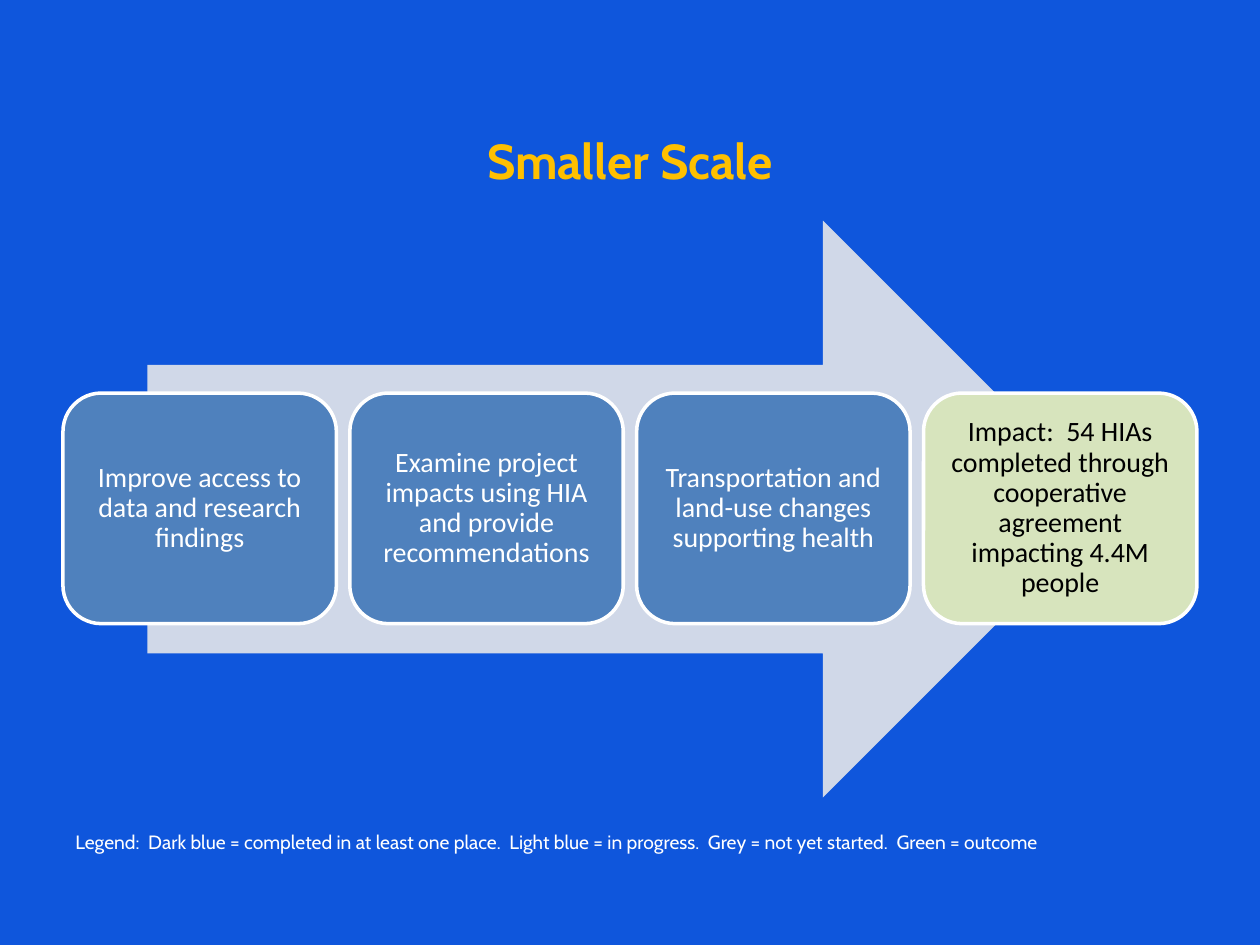
from pptx import Presentation
from pptx.dml.color import RGBColor
from pptx.enum.shapes import MSO_SHAPE as SHAPE
from pptx.enum.text import MSO_ANCHOR as ANCHOR, PP_ALIGN as ALIGN
from pptx.util import Inches, Pt

BLUE, GREEN, WHITE, BLACK = "4F81BD", "D7E4BD", "FFFFFF", "000000"
TITLE = "Smaller Scale"
STEPS = [
    ("Improve access to data and research findings", BLUE, WHITE),
    ("Examine project impacts using HIA and provide recommendations", BLUE, WHITE),
    ("Transportation and land-use changes supporting health", BLUE, WHITE),
    ("Impact:  54 HIAs completed through cooperative agreement impacting 4.4M people", GREEN, BLACK),
]
LEGEND = ("Legend:  Dark blue = completed in at least one place.  Light blue = in progress.  "
          "Grey = not yet started.  Green = outcome")

LEFT, WIDTH = 0.5, 9
STEP_TOP, STEP_W, STEP_H = 3.12, 2.17, 1.83
PITCH = (WIDTH - STEP_W) / (len(STEPS) - 1)


def rgb(color):
    return RGBColor.from_string(color)


def write(tf, text, size, font, color, align, spacing, anchor, bold=False):
    tf.word_wrap = True
    tf.vertical_anchor = anchor
    p = tf.paragraphs[0]
    p.alignment = align
    p.line_spacing = spacing
    r = p.add_run()
    r.text = text
    r.font.size = Pt(size)
    r.font.name = font
    r.font.bold = bold
    r.font.color.rgb = rgb(color)


def add_text(s, top, height, *style, **options):
    box = s.shapes.add_textbox(Inches(LEFT), Inches(top), Inches(WIDTH), Inches(height))
    write(box.text_frame, *style, **options)


def add_shape(s, kind, left, top, width, height, fill):
    sp = s.shapes.add_shape(kind, Inches(left), Inches(top), Inches(width), Inches(height))
    sp.shadow.inherit = False
    sp.fill.solid()
    sp.fill.fore_color.rgb = rgb(fill)
    sp.line.fill.background()
    return sp


def add_step(s, left, text, fill, color):
    sp = add_shape(s, SHAPE.ROUNDED_RECTANGLE, left, STEP_TOP, STEP_W, STEP_H, fill)
    sp.line.color.rgb = rgb(WHITE)
    sp.line.width = Pt(2)
    tf = sp.text_frame
    tf.margin_left = tf.margin_right = tf.margin_top = tf.margin_bottom = Inches(0.07)
    write(tf, text, 16, "Calibri", color, ALIGN.CENTER, 0.9, ANCHOR.MIDDLE)


def main():
    prs = Presentation()
    prs.slide_width, prs.slide_height = Inches(10), Inches(7.5)
    s = prs.slides.add_slide(prs.slide_layouts[6])
    s.background.fill.solid()
    s.background.fill.fore_color.rgb = rgb("0F56DC")

    add_text(s, 0.3, 1.25, TITLE, 28, "Cabin", "FFC000", ALIGN.CENTER, Pt(30), ANCHOR.BOTTOM, bold=True)
    add_text(s, 6.33, 0.49, LEGEND, 11, "Cabin", WHITE, ALIGN.LEFT, Pt(11), ANCHOR.BOTTOM)
    add_shape(s, SHAPE.RIGHT_ARROW, 1.17, 1.75, 7.65, 4.58, "D0D8E8")
    for i, step in enumerate(STEPS):
        add_step(s, LEFT + i * PITCH, *step)
    prs.save("out.pptx")


if __name__ == "__main__":
    main()
